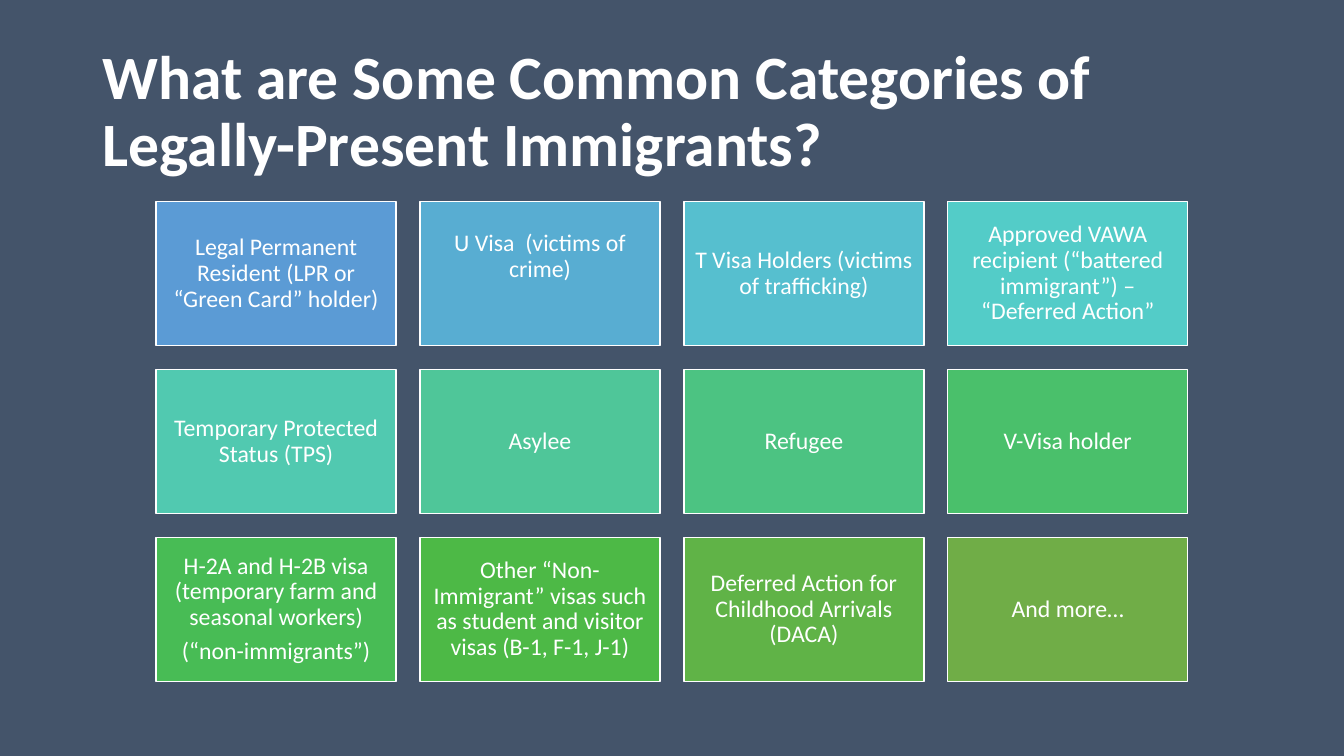
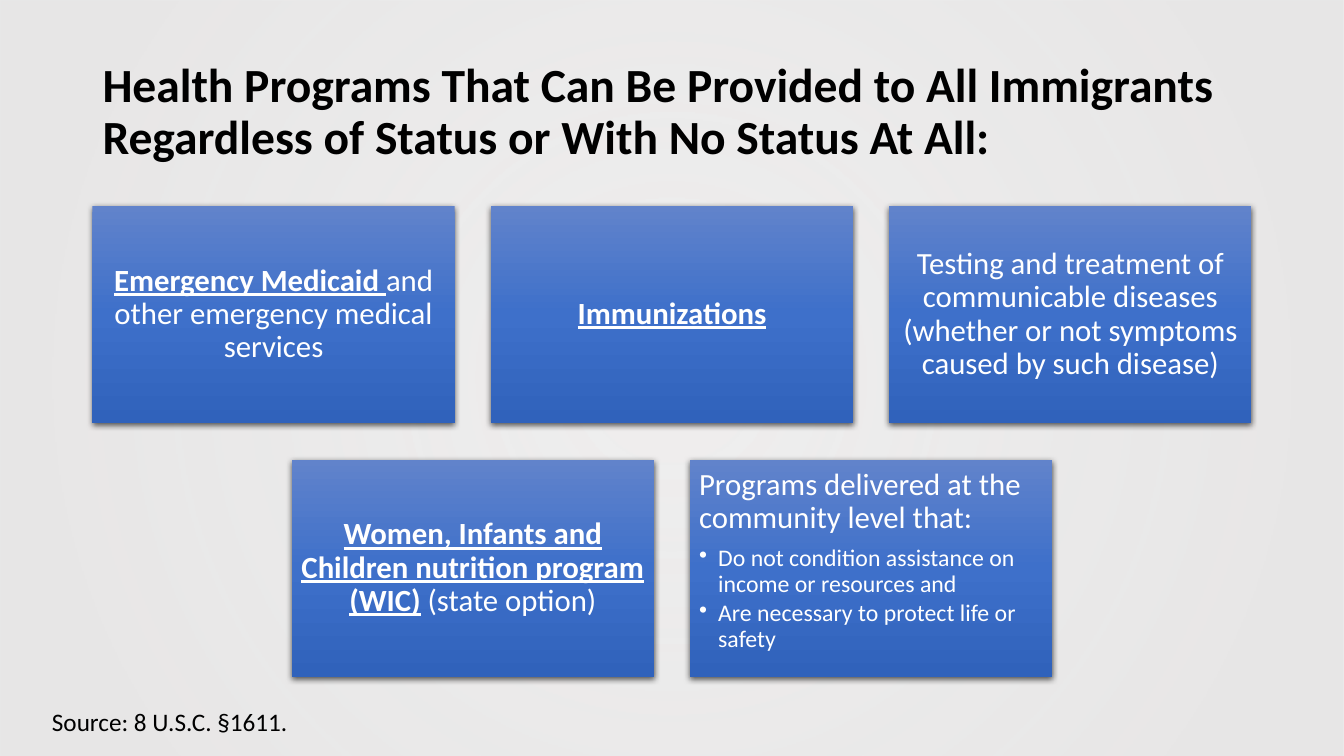
import dataclasses

import lxml.etree
import pptx
import pptx.dml.color
import pptx.enum.shapes
import pptx.enum.text
import pptx.oxml.ns
import pptx.util

Cm = pptx.util.Cm
Pt = pptx.util.Pt
Align = pptx.enum.text.PP_ALIGN
Anchor = pptx.enum.text.MSO_ANCHOR
qn = pptx.oxml.ns.qn


@dataclasses.dataclass(frozen=True)
class Theme:
    font: str = "Calibri"
    white: str = "FFFFFF"
    black: str = "000000"
    slate: str = "44546A"
    categories: tuple = (
        "5B9BD5", "58ADD2", "56BFCF", "53CCC8",
        "51C9B0", "4FC699", "4CC382", "4AC06B",
        "48BC55", "4DB946", "60B347", "70AD47",
    )
    program_stops: tuple = ((0, "6183CB", 100), (50, "3E70CA", 100), (100, "3062BB", 100))
    glow_stops: tuple = ((10, "E7E6E6", 68), (85, "E7E6E6", 97))
    title_large: int = 44
    title_small: int = 34
    program: int = 22
    source: int = 18
    category: int = 17
    line_spacing: float = 0.9


THEME = Theme()
WIDTH, HEIGHT = 33.87, 19.05


def rgb(value):
    return pptx.dml.color.RGBColor.from_string(value)


def element(parent, tag, **attributes):
    return lxml.etree.SubElement(parent, qn(tag), {k: str(v) for k, v in attributes.items()})


def write(paragraph, text, *, size, color=THEME.white, bold=False, underline=False,
          align=Align.LEFT, spacing=THEME.line_spacing, after=0):
    paragraph.alignment = align
    paragraph.line_spacing = spacing
    paragraph.space_after = Pt(after)
    run = paragraph.add_run()
    run.text = text
    run.font.name = THEME.font
    run.font.size = Pt(size)
    run.font.bold = bold
    run.font.underline = underline
    run.font.color.rgb = rgb(color)


def centred_grid(rows, top, width, height, gap):
    for row_index, row in enumerate(rows):
        left = (WIDTH - len(row) * width - (len(row) - 1) * gap) / 2
        for column, content in enumerate(row):
            yield content, (left + column * (width + gap), top + row_index * (height + gap), width, height)


class Deck:
    def __init__(self, theme):
        self.theme = theme
        self.presentation = pptx.Presentation()
        self.presentation.slide_width = Cm(WIDTH)
        self.presentation.slide_height = Cm(HEIGHT)
        self.slide = None

    def start(self, title, background, color, size):
        self.slide = self.presentation.slides.add_slide(self.presentation.slide_layouts[5])
        fill = self.slide.background.fill
        fill.solid()
        fill.fore_color.rgb = rgb(background)
        heading = self.slide.shapes.title
        heading.left, heading.top, heading.width, heading.height = Cm(2.33), Cm(1.01), Cm(29.21), Cm(3.68)
        frame = heading.text_frame
        frame.auto_size = pptx.enum.text.MSO_AUTO_SIZE.NONE
        frame.vertical_anchor = Anchor.MIDDLE
        write(frame.paragraphs[0], title, size=size, color=color, bold=True)

    def rectangle(self, box):
        shape = self.slide.shapes.add_shape(
            pptx.enum.shapes.MSO_SHAPE.RECTANGLE, *(Cm(length) for length in box))
        shape.shadow.inherit = False
        shape.line.fill.background()
        return shape

    def gradient(self, shape, stops, radial=False):
        shape.fill.background()
        properties = shape._element.spPr
        gradient = lxml.etree.Element(qn("a:gradFill"), rotWithShape="1")
        stop_list = element(gradient, "a:gsLst")
        for position, color, opacity in stops:
            stop = element(stop_list, "a:gs", pos=position * 1000)
            value = element(stop, "a:srgbClr", val=color)
            if opacity < 100:
                element(value, "a:alpha", val=opacity * 1000)
        if radial:
            focus = element(gradient, "a:path", path="circle")
            element(focus, "a:fillToRect", l=50000, t=50000, r=50000, b=50000)
        else:
            element(gradient, "a:lin", ang=5400000, scaled=0)
        properties.replace(properties.find(qn("a:noFill")), gradient)

    def glow(self):
        panel = self.rectangle((0, 0, WIDTH, HEIGHT))
        self.gradient(panel, self.theme.glow_stops, radial=True)
        self.slide.shapes._spTree.insert(2, panel._element)

    def drop_shadow(self, shape):
        effects = shape._element.spPr.find(qn("a:effectLst"))
        shadow = element(effects, "a:outerShdw", blurRad=Pt(4.5), dist=Pt(1.5),
                         dir=5400000, algn="ctr", rotWithShape=0)
        element(element(shadow, "a:srgbClr", val=self.theme.black), "a:alpha", val=63000)

    def frame(self, shape, inset, anchor=Anchor.MIDDLE, lift=0):
        frame = shape.text_frame
        frame.word_wrap = True
        frame.vertical_anchor = anchor
        frame.margin_left = frame.margin_right = frame.margin_top = Cm(inset)
        frame.margin_bottom = Cm(inset + lift)
        return frame

    def category_card(self, lines, box, fill, lift=0):
        card = self.rectangle(box)
        card.fill.solid()
        card.fill.fore_color.rgb = rgb(fill)
        card.line.color.rgb = rgb(self.theme.white)
        card.line.width = Pt(1)
        frame = self.frame(card, 0.18, lift=lift)
        for index, line in enumerate(lines):
            paragraph = frame.add_paragraph() if index else frame.paragraphs[0]
            write(paragraph, line, size=self.theme.category, align=Align.CENTER, after=6)

    def program_card(self, lead, rest, bullets, box):
        card = self.rectangle(box)
        self.gradient(card, self.theme.program_stops)
        self.drop_shadow(card)
        frame = self.frame(card, 0.23, Anchor.TOP if bullets else Anchor.MIDDLE)
        style = dict(size=self.theme.program, after=7.7,
                     align=Align.LEFT if bullets else Align.CENTER)
        if lead:
            write(frame.paragraphs[0], lead, bold=True, underline=True, **style)
        if rest:
            write(frame.paragraphs[0], rest, **style)
        for text in bullets:
            self.bullet(frame.add_paragraph(), text)

    def bullet(self, paragraph, text):
        write(paragraph, text, size=self.theme.category, after=2.55)
        paragraph.level = 1
        properties = paragraph._p.get_or_add_pPr()
        properties.set("marL", str(Cm(0.48)))
        properties.set("indent", str(-Cm(0.48)))
        element(properties, "a:buChar", char="•")

    def source(self, text, box):
        note = self.slide.shapes.add_textbox(*(Cm(length) for length in box))
        note.text_frame.word_wrap = True
        write(note.text_frame.paragraphs[0], text, size=self.theme.source,
              color=self.theme.black, spacing=1.0)


CATEGORIES = (
    (
        ("Legal Permanent Resident (LPR or “Green Card” holder)",),
        ("U Visa  (victims of crime)",),
        ("T Visa Holders (victims of trafficking)",),
        ("Approved VAWA recipient (“battered immigrant”) – “Deferred Action”",),
    ),
    (
        ("Temporary Protected Status (TPS)",),
        ("Asylee",),
        ("Refugee",),
        ("V-Visa holder",),
    ),
    (
        ("H-2A and H-2B visa (temporary farm and seasonal workers)", "(“non-immigrants”)"),
        ("Other “Non-Immigrant” visas such as student and visitor visas (B-1, F-1, J-1)",),
        ("Deferred Action for Childhood Arrivals (DACA)",),
        ("And more…",),
    ),
)

PROGRAMS = (
    (
        ("Emergency Medicaid ", "and other emergency medical services", ()),
        ("Immunizations", "", ()),
        ("", "Testing and treatment of communicable diseases "
             "(whether or not symptoms caused by such disease)", ()),
    ),
    (
        ("Women, Infants and Children nutrition program (WIC)", " (state option)", ()),
        ("", "Programs delivered at the community level that:", (
            "Do not condition assistance on income or resources and",
            "Are necessary to protect life or safety",
        )),
    ),
)


def categories_slide(deck):
    deck.start("What are Some Common Categories of Legally-Present Immigrants?",
               THEME.slate, THEME.white, THEME.title_large)
    cells = centred_grid(CATEGORIES, top=5.08, width=6.05, height=3.63, gap=0.6)
    for (lines, box), fill in zip(cells, THEME.categories):
        lift = 0.86 if lines[0].startswith("U Visa") else 0
        deck.category_card(lines, box, fill, lift)


def programs_slide(deck):
    deck.start("Health Programs That Can Be Provided to All Immigrants "
               "Regardless of Status or With No Status At All:",
               THEME.white, THEME.black, THEME.title_small)
    deck.glow()
    for program, box in centred_grid(PROGRAMS, top=5.19, width=9.13, height=5.48, gap=0.91):
        deck.program_card(*program, box)
    deck.source("Source: 8 U.S.C. §1611.", (1.06, 17.67, 18.41, 1.03))


def main():
    deck = Deck(THEME)
    categories_slide(deck)
    programs_slide(deck)
    deck.presentation.save("out.pptx")


if __name__ == "__main__":
    main()
